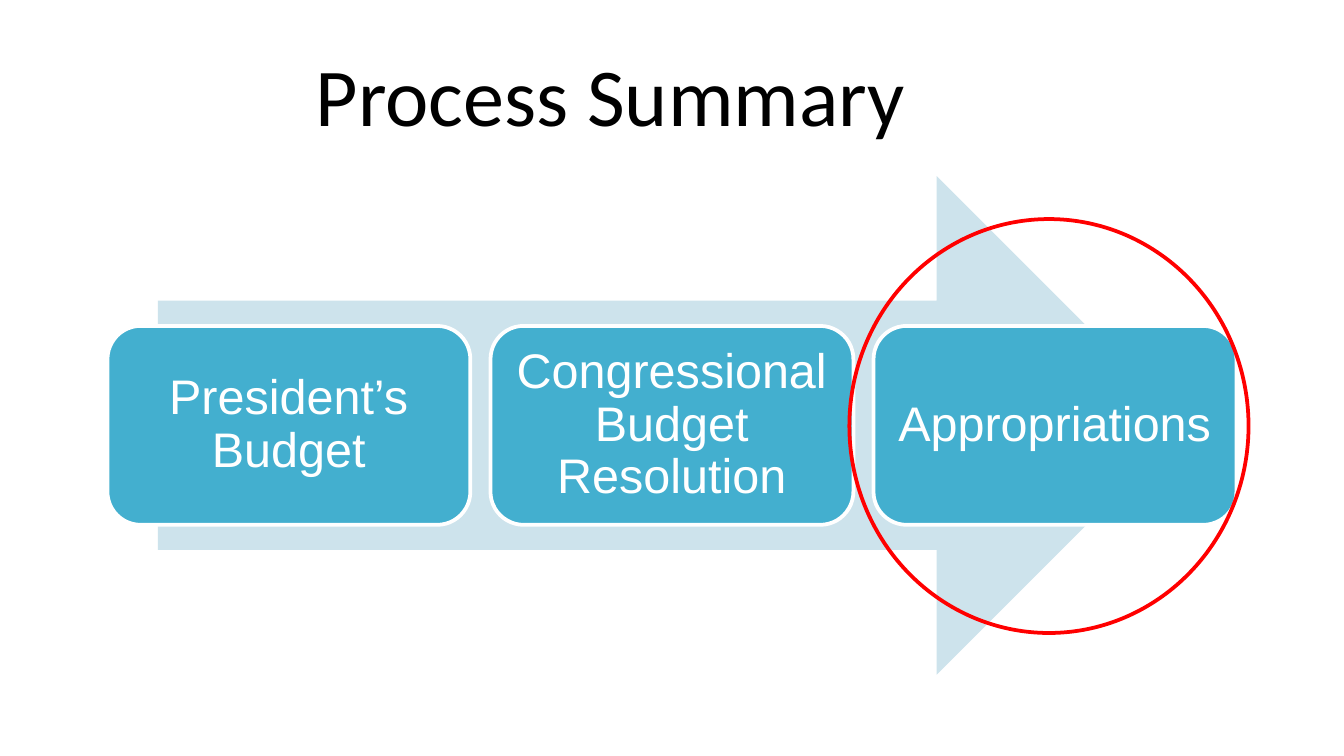
from pptx import Presentation
from pptx.dml.color import RGBColor
from pptx.enum.shapes import MSO_SHAPE
from pptx.enum.text import MSO_ANCHOR, PP_ALIGN
from pptx.util import Inches, Pt

TITLE = "Process Summary"
STEPS = ["President’s Budget", "Congressional Budget Resolution", "Appropriations"]

SLIDE_WIDTH = 10
SLIDE_HEIGHT = SLIDE_WIDTH * 9 / 16
STEP_WIDTH, STEP_HEIGHT = 2.7, 1.48
GAP = 0.15
MARGIN = (SLIDE_WIDTH - STEP_WIDTH * len(STEPS) - GAP * (len(STEPS) - 1)) / 2
ARROW_WIDTH, ARROW_HEIGHT = 7.65, 3.71
ARROW_TOP = 1.31
MIDDLE = ARROW_TOP + ARROW_HEIGHT / 2


def color(value):
    return RGBColor.from_string(value)


def write(shape, text, size, font, ink, spacing=1.0, inset=(0.1, 0.05)):
    frame = shape.text_frame
    frame.word_wrap = True
    frame.vertical_anchor = MSO_ANCHOR.MIDDLE
    frame.margin_left = frame.margin_right = Inches(inset[0])
    frame.margin_top = frame.margin_bottom = Inches(inset[1])
    paragraph = frame.paragraphs[0]
    paragraph.text = text
    paragraph.alignment = PP_ALIGN.CENTER
    paragraph.line_spacing = spacing
    paragraph.font.size = Pt(size)
    paragraph.font.name = font
    paragraph.font.color.rgb = color(ink)


def add_shape(slide, kind, left, top, width, height, fill=None, line=None):
    shape = slide.shapes.add_shape(
        kind, Inches(left), Inches(top), Inches(width), Inches(height))
    shape.shadow.inherit = False
    if fill:
        shape.fill.solid()
        shape.fill.fore_color.rgb = color(fill)
    else:
        shape.fill.background()
    if line:
        shape.line.color.rgb = color(line)
        shape.line.width = Pt(2)
    else:
        shape.line.fill.background()
    return shape


def main():
    presentation = Presentation()
    presentation.slide_width = Inches(SLIDE_WIDTH)
    presentation.slide_height = Inches(SLIDE_HEIGHT)
    slide = presentation.slides.add_slide(presentation.slide_layouts[5])

    title = slide.shapes.title
    title.left, title.top = Inches(0.5), Inches(0.23)
    title.width, title.height = Inches(8.09), Inches(0.94)
    write(title, TITLE, size=44, font="Calibri", ink="000000")

    add_shape(slide, MSO_SHAPE.RIGHT_ARROW, (SLIDE_WIDTH - ARROW_WIDTH) / 2,
              ARROW_TOP, ARROW_WIDTH, ARROW_HEIGHT, fill="CDE3EC")

    for index, text in enumerate(STEPS):
        step = add_shape(slide, MSO_SHAPE.ROUNDED_RECTANGLE,
                         MARGIN + index * (STEP_WIDTH + GAP), MIDDLE - STEP_HEIGHT / 2,
                         STEP_WIDTH, STEP_HEIGHT, fill="43AFCF", line="FFFFFF")
        write(step, text, size=26, font="Arial", ink="FFFFFF", spacing=0.9,
              inset=(0.1, 0.1))

    add_shape(slide, MSO_SHAPE.OVAL, 6.32, 1.63, 2.97, 3.08, line="FF0000")
    presentation.save("out.pptx")


if __name__ == "__main__":
    main()
